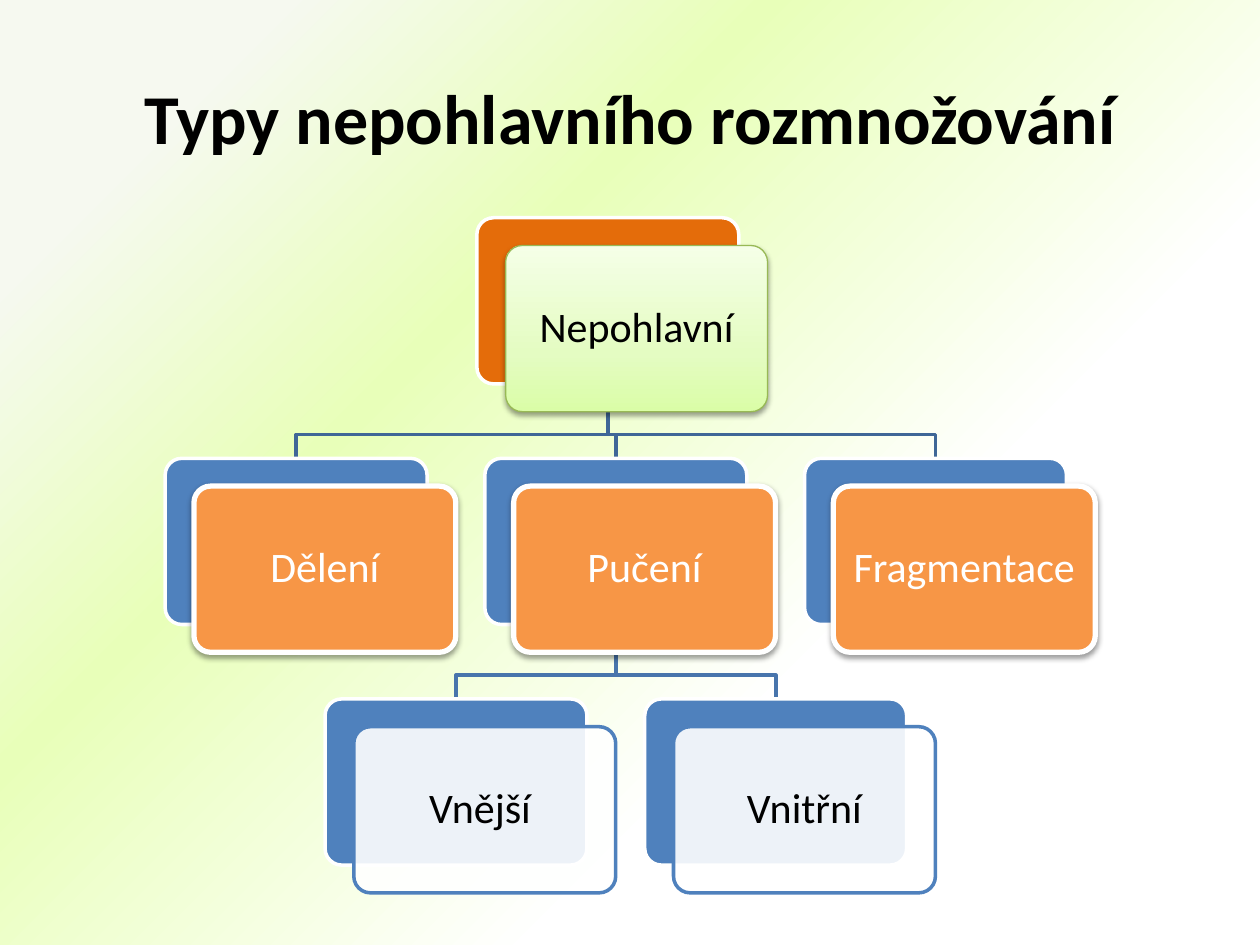
"""Build a slide with a tree of the kinds of asexual reproduction."""
from collections import namedtuple
from dataclasses import dataclass

import pptx
import pptx.dml.color
import pptx.enum.shapes
import pptx.enum.text
import pptx.oxml
import pptx.oxml.ns
import pptx.util
from pptx.util import Cm

Box = namedtuple("Box", "left top width height")
Style = namedtuple("Style", "back front line line_width text shadow branch")
Node = namedtuple("Node", "text column row style parent")


@dataclass(frozen=True)
class Theme:
    """Colours, type sizes and card styles of the slide."""
    font: str = "Calibri"
    title_size: int = 40
    card_size: int = 24
    black: str = "000000"
    white: str = "FFFFFF"
    background: tuple = ((13, "F6F9F0"), (35, "E8FFB9"), (67, "FFFFFF"))
    root: Style = Style("E46C0A", ((0, "DAFDA7"), (35, "E4FCC2"), (100, "F5FFE7")),
                        "98B955", 0.75, "000000", True, None)
    kind: Style = Style("4F81BD", "F79646", "FFFFFF", 3, "FFFFFF", True, "3F6797")
    leaf: Style = Style("4F81BD", None, "4F81BD", 2, "000000", False, "4875AC")


THEME = Theme()
NODES = (
    Node("Nepohlavní", 0.975, 0, THEME.root, None),
    Node("Dělení", 0, 1, THEME.kind, 0),
    Node("Pučení", 1, 1, THEME.kind, 0),
    Node("Fragmentace", 2, 1, THEME.kind, 0),
    Node("Vnější ", 0.5, 2, THEME.leaf, 2),
    Node("Vnitřní", 1.5, 2, THEME.leaf, 2),
)
CARD_WIDTH, CARD_HEIGHT = 5.28, 3.35
OFFSET_X, OFFSET_Y = 0.58, 0.56
BEND_GAP = 0.48


def rgb(value):
    """Return a colour object for a hexadecimal value."""
    return pptx.dml.color.RGBColor.from_string(value)


def lengths(box):
    """Convert a box in centimetres to slide lengths."""
    return [Cm(value) for value in box]


def add_element(parent, tag, **attributes):
    """Append a drawing element with attributes and return it."""
    element = pptx.oxml.parse_xml(f"<a:{tag} {pptx.oxml.ns.nsdecls('a')}/>")
    for name, value in attributes.items():
        element.set(name, str(value))
    parent.append(element)
    return element


def set_gradient(fill, element, stops, angle):
    """Give a fill a linear gradient with any number of stops."""
    fill.gradient()
    fill.gradient_angle = angle
    stop_list = element.find(".//" + pptx.oxml.ns.qn("a:gsLst"))
    stop_list.clear()
    for position, colour in stops:
        stop = add_element(stop_list, "gs", pos=position * 1000)
        add_element(stop, "srgbClr", val=colour)


def add_shadow(shape):
    """Give a shape a soft shadow straight below it."""
    effects = shape.element.spPr.find(pptx.oxml.ns.qn("a:effectLst"))
    shadow = add_element(effects, "outerShdw", blurRad=40000, dist=20000,
                         dir=5400000, rotWithShape=0)
    colour = add_element(shadow, "srgbClr", val=THEME.black)
    add_element(colour, "alpha", val=38000)


def write_text(shape, text, size, colour, bold=False):
    """Write one centred paragraph into a shape."""
    frame = shape.text_frame
    frame.word_wrap = True
    frame.vertical_anchor = pptx.enum.text.MSO_ANCHOR.MIDDLE
    paragraph = frame.paragraphs[0]
    paragraph.text = text
    paragraph.alignment = pptx.enum.text.PP_ALIGN.CENTER
    font = paragraph.font
    font.name, font.size, font.bold = THEME.font, pptx.util.Pt(size), bold
    font.color.rgb = rgb(colour)
    return paragraph


def add_title(slide, box):
    """Add the slide title in the given box."""
    title = slide.shapes.add_textbox(*lengths(box))
    write_text(title, "Typy nepohlavního rozmnožování", THEME.title_size, THEME.black, True)


def add_plate(slide, box, line, line_width):
    """Add one rounded rectangle with an outline and no shadow."""
    plate = slide.shapes.add_shape(
        pptx.enum.shapes.MSO_SHAPE.ROUNDED_RECTANGLE, *lengths(box))
    plate.adjustments[0] = 0.1
    plate.shadow.inherit = False
    plate.line.color.rgb = rgb(line)
    plate.line.width = pptx.util.Pt(line_width)
    return plate


def add_card(slide, box, text, style):
    """Add a back plate in the box and a labelled front plate offset from it."""
    back = add_plate(slide, box, THEME.white, 2)
    back.fill.solid()
    back.fill.fore_color.rgb = rgb(style.back)

    front_box = box._replace(left=box.left + OFFSET_X, top=box.top + OFFSET_Y)
    front = add_plate(slide, front_box, style.line, style.line_width)
    if isinstance(style.front, tuple):
        set_gradient(front.fill, front.element, style.front, 90)
    else:
        front.fill.solid()
        front.fill.fore_color.rgb = rgb(style.front or THEME.white)
    if style.front is None:
        colour = front.element.spPr.find(
            pptx.oxml.ns.qn("a:solidFill") + "/" + pptx.oxml.ns.qn("a:srgbClr"))
        add_element(colour, "alpha", val=90000)
    if style.shadow:
        add_shadow(front)

    paragraph = write_text(front, text, THEME.card_size, style.text)
    paragraph.line_spacing = 0.9
    frame = front.text_frame
    frame.margin_left = frame.margin_right = Cm(0.25)
    frame.margin_top = frame.margin_bottom = Cm(0.25)


def add_branch(slide, parent, child, colour):
    """Add a stepped line from the parent's bottom to the child's top."""
    start_x = Cm(parent.left + parent.width / 2)
    end_x = Cm(child.left + child.width / 2)
    bend_y = Cm(child.top - BEND_GAP)
    builder = slide.shapes.build_freeform(start_x, Cm(parent.top + parent.height))
    builder.add_line_segments(
        [(start_x, bend_y), (end_x, bend_y), (end_x, Cm(child.top))], close=False)
    branch = builder.convert_to_shape()
    branch.shadow.inherit = False
    branch.fill.background()
    branch.line.color.rgb = rgb(colour)
    branch.line.width = pptx.util.Pt(2)


def add_tree(slide, box):
    """Lay out the cards in three rows and three columns with their branches."""
    pitch_x = (box.width - CARD_WIDTH - OFFSET_X) / 2
    pitch_y = (box.height - CARD_HEIGHT - OFFSET_Y) / 2
    cards = [Box(box.left + node.column * pitch_x, box.top + node.row * pitch_y,
                 CARD_WIDTH, CARD_HEIGHT) for node in NODES]
    for node, card in zip(NODES, cards):
        if node.parent is not None:
            add_branch(slide, cards[node.parent], card, node.style.branch)
    for node, card in zip(NODES, cards):
        add_card(slide, card, node.text, node.style)


def main():
    """Build and save the presentation."""
    presentation = pptx.Presentation()
    presentation.slide_width, presentation.slide_height = Cm(25.4), Cm(19.05)
    slide = presentation.slides.add_slide(presentation.slide_layouts[6])
    set_gradient(slide.background.fill, slide.element, THEME.background, 315)
    add_title(slide, Box(1.27, 0.76, 22.86, 3.18))
    add_tree(slide, Box(3.33, 4.39, 18.75, 13.61))
    presentation.save("out.pptx")


if __name__ == "__main__":
    main()
